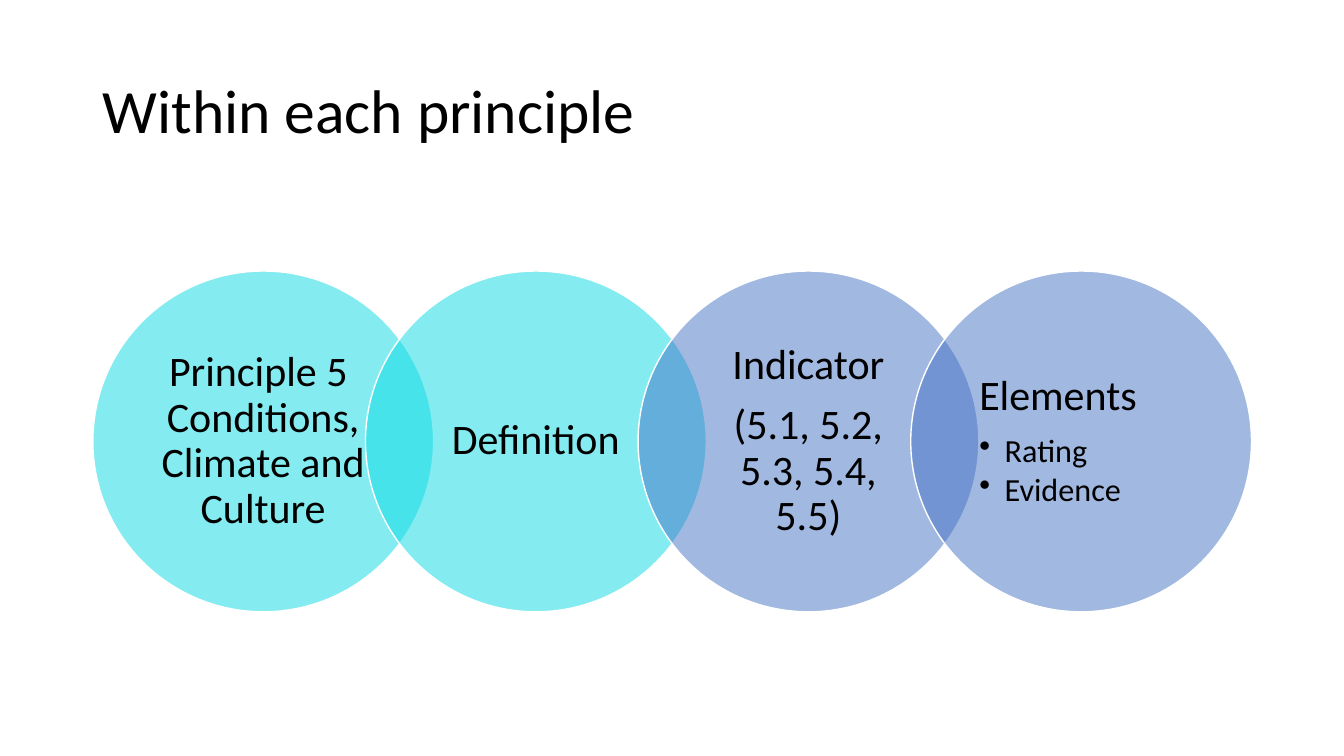
from lxml import etree
from pptx import Presentation
from pptx.dml.color import RGBColor
from pptx.enum.shapes import MSO_SHAPE
from pptx.enum.text import MSO_ANCHOR, MSO_AUTO_SIZE, PP_ALIGN
from pptx.oxml.ns import qn
from pptx.util import Cm, Pt

OVAL = MSO_SHAPE.OVAL
MIDDLE = MSO_ANCHOR.MIDDLE
NO_AUTOFIT = MSO_AUTO_SIZE.NONE
LEFT, CENTER = PP_ALIGN.LEFT, PP_ALIGN.CENTER

BLACK = RGBColor(0x00, 0x00, 0x00)
WHITE = RGBColor(0xFF, 0xFF, 0xFF)
TURQUOISE = RGBColor(0x0B, 0xDB, 0xE5)
BLUE = RGBColor(0x44, 0x72, 0xC4)

FONT = "Calibri"
TITLE_ONLY_LAYOUT = 5
STEP_RATIO = 0.8  # each circle starts at 80 % of the previous diameter

HEADING = {"size": 30, "space_after": 10.5}
BULLET = {"size": 23, "space_after": 3.5, "bullet": "•"}

# Fill, alignment and (text, format) paragraphs of each circle
CIRCLES = [
    (TURQUOISE, CENTER, [("Principle 5  Conditions, Climate and Culture", HEADING)]),
    (TURQUOISE, CENTER, [("Definition", HEADING)]),
    (BLUE, CENTER, [("Indicator", HEADING), ("(5.1, 5.2, 5.3, 5.4, 5.5)", HEADING)]),
    (BLUE, LEFT, [("Elements", HEADING), ("Rating", BULLET), ("Evidence", BULLET)]),
]


def write_paragraph(paragraph, text, size, align=LEFT, space_after=0, bullet=None):
    paragraph.alignment = align
    paragraph.line_spacing = 0.9
    paragraph.space_before = Pt(0)
    paragraph.space_after = Pt(space_after)
    run = paragraph.add_run()
    run.text = text
    run.font.name = FONT
    run.font.size = Pt(size)
    run.font.color.rgb = BLACK
    if bullet:
        paragraph.level = 1
        properties = paragraph._p.get_or_add_pPr()
        properties.set("marL", str(Cm(0.64)))
        properties.set("indent", str(-Cm(0.64)))
        etree.SubElement(properties, qn("a:buChar")).set("char", bullet)


def set_half_transparent(shape):
    color = shape.fill._xPr.find(qn("a:solidFill"))[0]
    etree.SubElement(color, qn("a:alpha")).set("val", "50000")


def place_title(slide, text, left, top, width, height):
    title = slide.shapes.title
    title.left, title.top, title.width, title.height = left, top, width, height
    frame = title.text_frame
    frame.auto_size = NO_AUTOFIT
    frame.vertical_anchor = MIDDLE
    write_paragraph(frame.paragraphs[0], text, 44)


def add_circle(slide, left, top, diameter, fill, align, paragraphs):
    circle = slide.shapes.add_shape(OVAL, left, top, diameter, diameter)
    circle.shadow.inherit = False
    circle.fill.solid()
    circle.fill.fore_color.rgb = fill
    set_half_transparent(circle)
    circle.line.color.rgb = WHITE
    circle.line.width = Pt(1)

    frame = circle.text_frame
    frame.word_wrap = True
    frame.vertical_anchor = MIDDLE
    frame.margin_left = frame.margin_right = Cm(0.47)
    frame.margin_top = frame.margin_bottom = Cm(0.1)
    for index, (text, text_format) in enumerate(paragraphs):
        paragraph = frame.add_paragraph() if index else frame.paragraphs[0]
        write_paragraph(paragraph, text, align=align, **text_format)


def add_circle_chain(slide, left, top, width):
    """Fill the width with a row of overlapping circles."""
    diameter = int(width / (1 + STEP_RATIO * (len(CIRCLES) - 1)))
    for index, (fill, align, paragraphs) in enumerate(CIRCLES):
        circle_left = left + int(index * STEP_RATIO * diameter)
        add_circle(slide, circle_left, top, diameter, fill, align, paragraphs)


def main():
    presentation = Presentation()
    presentation.slide_width = Cm(33.87)
    presentation.slide_height = Cm(19.05)
    slide = presentation.slides.add_slide(presentation.slide_layouts[TITLE_ONLY_LAYOUT])
    place_title(slide, "Within each principle", Cm(2.33), Cm(1.01), Cm(29.21), Cm(3.68))
    add_circle_chain(slide, Cm(2.34), Cm(6.83), Cm(29.2))
    presentation.save("out.pptx")


if __name__ == "__main__":
    main()
